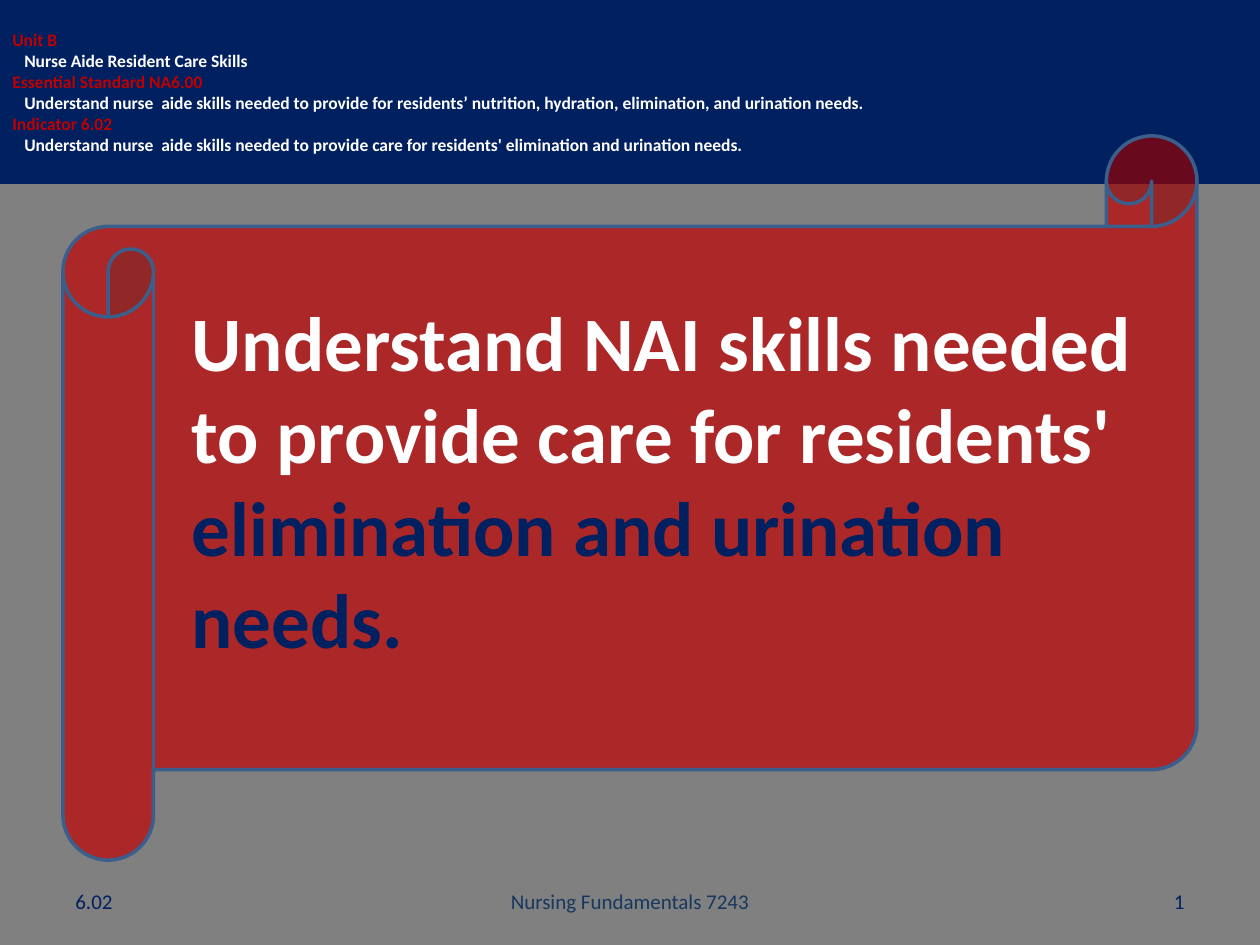
from lxml import etree
from pptx import Presentation
from pptx.dml.color import RGBColor
from pptx.enum.shapes import MSO_SHAPE
from pptx.enum.text import MSO_ANCHOR, MSO_AUTO_SIZE, PP_ALIGN
from pptx.oxml.ns import qn
from pptx.util import Cm, Pt

RECTANGLE, SCROLL = MSO_SHAPE.RECTANGLE, MSO_SHAPE.HORIZONTAL_SCROLL
TOP, MIDDLE = MSO_ANCHOR.TOP, MSO_ANCHOR.MIDDLE
LEFT, CENTER, RIGHT = PP_ALIGN.LEFT, PP_ALIGN.CENTER, PP_ALIGN.RIGHT
NO_AUTOFIT = MSO_AUTO_SIZE.NONE
NAVY, RED, WHITE, GRAY = "002060", "C00000", "FFFFFF", "808080"
SCROLL_EDGE, FOOTER_BLUE = "3A5F8C", "17375E"

OUTLINE = [
    ("Unit B", "Nurse Aide Resident Care Skills"),
    ("Essential Standard NA6.00",
     "Understand nurse  aide skills needed to provide for residents’ "
     "nutrition, hydration, elimination, and urination needs."),
    ("Indicator 6.02",
     "Understand nurse  aide skills needed to provide care for residents' "
     "elimination and urination needs."),
]
OBJECTIVE = [
    ("Understand NAI skills needed to provide care for residents' ", WHITE),
    ("elimination and urination needs.", NAVY),
]


def rgb(hex_color):
    """Turn a hex string into a colour."""
    return RGBColor.from_string(hex_color)


def add_run(paragraph, text, size, color, bold=False):
    """Append one formatted run to a paragraph."""
    run = paragraph.add_run()
    run.text = text
    run.font.name = "Calibri"
    run.font.size = Pt(size)
    run.font.bold = bold
    run.font.color.rgb = rgb(color)


def add_filled_shape(slide, preset, box, color):
    """Add a flat preset shape with a solid fill and no outline."""
    shape = slide.shapes.add_shape(preset, *map(Cm, box))
    shape.shadow.inherit = False
    shape.fill.solid()
    shape.fill.fore_color.rgb = rgb(color)
    shape.line.fill.background()
    return shape


def build_header(slide, box):
    """Place the navy band with its headings and indented descriptions."""
    band = add_filled_shape(slide, RECTANGLE, box, NAVY)
    frame = band.text_frame
    frame.word_wrap = True
    frame.vertical_anchor = TOP
    frame.margin_top = Cm(0.58)
    lines = [line for heading, description in OUTLINE
             for line in ((heading, RED, 0), (description, WHITE, 0.24))]
    for index, (text, color, indent) in enumerate(lines):
        paragraph = frame.add_paragraph() if index else frame.paragraphs[0]
        paragraph.alignment = LEFT
        paragraph._p.get_or_add_pPr().set("marL", str(Cm(indent)))
        add_run(paragraph, text, 10, color, bold=True)


def build_scroll(slide, box):
    """Place the translucent scroll and the objective written on it."""
    left, top, width, height = box
    scroll = add_filled_shape(slide, SCROLL, box, RED)
    scroll.line.color.rgb = rgb(SCROLL_EDGE)
    scroll.line.width = Pt(2)
    fill_color = scroll._element.spPr.find(qn("a:solidFill"))[0]
    etree.SubElement(fill_color, qn("a:alpha")).set("val", "69000")

    objective = slide.placeholders[1]
    objective.left, objective.top = Cm(left + 2.34), Cm(top + 3.07)
    objective.width, objective.height = Cm(width - 3.38), Cm(height - 6.12)
    slide.shapes._spTree.append(objective._element)
    objective.text_frame.auto_size = NO_AUTOFIT
    paragraph = objective.text_frame.paragraphs[0]
    paragraph.space_before = Pt(0)
    properties = paragraph._p.get_or_add_pPr()
    properties.set("marL", "0")
    properties.set("indent", "0")
    etree.SubElement(properties, qn("a:buNone"))
    for text, color in OBJECTIVE:
        add_run(paragraph, text, 44, color, bold=True)


def build_footer(slide, box):
    """Place the indicator, course name and page number in one row."""
    left, top, width, height = box
    side, middle = 5.92, 8.05
    entries = [
        ("6.02", left, side, LEFT, NAVY),
        ("Nursing Fundamentals 7243", left + (width - middle) / 2, middle,
         CENTER, FOOTER_BLUE),
        ("1", left + width - side, side, RIGHT, NAVY),
    ]
    for text, entry_left, entry_width, alignment, color in entries:
        entry = slide.shapes.add_textbox(
            *map(Cm, (entry_left, top, entry_width, height)))
        frame = entry.text_frame
        frame.word_wrap = True
        frame.vertical_anchor = MIDDLE
        frame.paragraphs[0].alignment = alignment
        add_run(frame.paragraphs[0], text, 12, color)


def main():
    """Build the slide and save the presentation."""
    presentation = Presentation()
    presentation.slide_width, presentation.slide_height = Cm(25.4), Cm(19.05)
    slide = presentation.slides.add_slide(presentation.slide_layouts[1])
    title = slide.shapes.title._element
    title.getparent().remove(title)
    slide.background.fill.solid()
    slide.background.fill.fore_color.rgb = rgb(GRAY)
    build_header(slide, (0, 0, 25.4, 3.71))
    build_scroll(slide, (1.27, 2.74, 22.86, 14.6))
    build_footer(slide, (1.27, 17.65, 22.86, 1.02))
    presentation.save("out.pptx")


if __name__ == "__main__":
    main()
